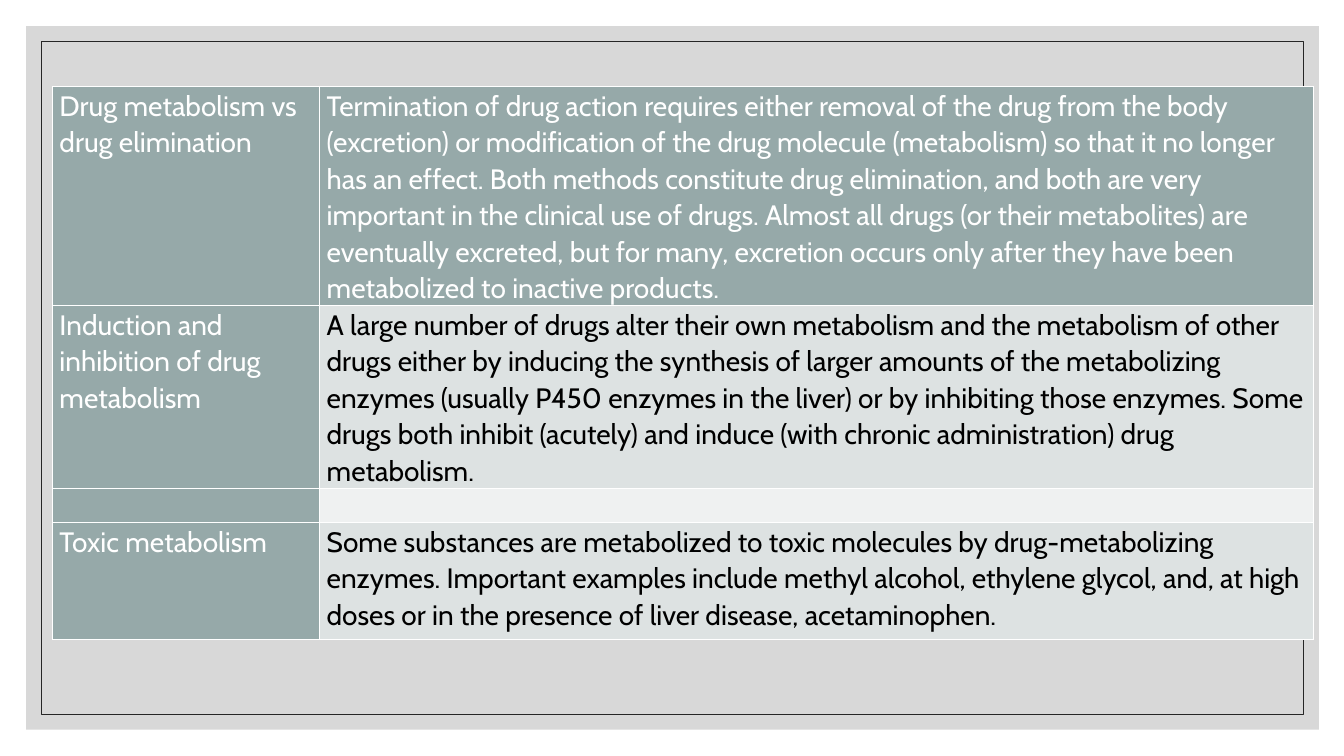
import pptx
import pptx.dml.color
import pptx.enum.shapes
import pptx.oxml
import pptx.oxml.ns
import pptx.util
from pptx.util import Inches

RGBColor = pptx.dml.color.RGBColor
WHITE = RGBColor(0xFF, 0xFF, 0xFF)
BLACK = RGBColor(0, 0, 0)
PANEL_GREY = RGBColor(0xBF, 0xBF, 0xBF)
FRAME_GREY = RGBColor(0x26, 0x26, 0x26)
SAGE = RGBColor(0x96, 0xA9, 0xA9)
BAND_DARK = RGBColor(0xDD, 0xE2, 0xE2)
BAND_LIGHT = RGBColor(0xEF, 0xF1, 0xF1)

# Topic, explanation, row height, explanation fill, explanation text colour
TOPICS = [
    ("Drug metabolism vs drug elimination",
     "Termination of drug action requires either removal of the drug from the body "
     "(excretion) or modification of the drug molecule (metabolism) so that it no longer "
     "has an effect. Both methods constitute drug elimination, and both are very important "
     "in the clinical use of drugs. Almost all drugs (or their metabolites) are eventually "
     "excreted, but for many, excretion occurs only after they have been metabolized to "
     "inactive products.",
     2.17, SAGE, WHITE),
    ("Induction and inhibition of drug metabolism",
     "A large number of drugs alter their own metabolism and the metabolism of other drugs "
     "either by inducing the synthesis of larger amounts of the metabolizing enzymes "
     "(usually P450 enzymes in the liver) or by inhibiting those enzymes. Some drugs both "
     "inhibit (acutely) and induce (with chronic administration) drug metabolism.",
     1.81, BAND_DARK, BLACK),
    ("", "", 0.34, BAND_LIGHT, BLACK),
    ("Toxic metabolism",
     "Some substances are metabolized to toxic molecules by drug-metabolizing enzymes. "
     "Important examples include methyl alcohol, ethylene glycol, and, at high doses or in "
     "the presence of liver disease, acetaminophen.",
     1.16, BAND_DARK, BLACK),
]
COLUMN_WIDTHS = (2.65, 9.86)


class MetabolismSlide:
    font = "Cabin"
    size = pptx.util.Pt(20)

    def __init__(self, deck):
        self.slide = deck.slides.add_slide(deck.slide_layouts[6])

    def rectangle(self, left, top, width, height, fill=None, alpha=100, line=None):
        box = self.slide.shapes.add_shape(
            pptx.enum.shapes.MSO_SHAPE.RECTANGLE,
            Inches(left), Inches(top), Inches(width), Inches(height))
        box.shadow.inherit = False
        if fill is None:
            box.fill.background()
        else:
            box.fill.solid()
            box.fill.fore_color.rgb = fill
            colour = box.fill._xPr.find(".//" + pptx.oxml.ns.qn("a:srgbClr"))
            colour.append(pptx.oxml.parse_xml(
                f'<a:alpha {pptx.oxml.ns.nsdecls("a")} val="{alpha * 1000}"/>'))
        if line is None:
            box.line.fill.background()
        else:
            box.line.color.rgb = line
            box.line.width = pptx.util.Pt(0.5)

    def cell(self, cell, text, fill, color):
        cell.fill.solid()
        cell.fill.fore_color.rgb = fill
        cell.margin_left = cell.margin_right = Inches(0.07)
        cell.margin_top = cell.margin_bottom = 0
        self.borders(cell)
        if text:
            paragraph = cell.text_frame.paragraphs[0]
            paragraph.line_spacing = 1.07
            paragraph.space_after = pptx.util.Pt(8)
            run = paragraph.add_run()
            run.text = text
            run.font.name = self.font
            run.font.size = self.size
            run.font.bold = False
            run.font.color.rgb = color

    def borders(self, cell):
        properties = cell._tc.get_or_add_tcPr()
        for position, side in enumerate(("lnL", "lnR", "lnT", "lnB")):
            properties.insert(position, pptx.oxml.parse_xml(
                f'<a:{side} {pptx.oxml.ns.nsdecls("a")} w="{pptx.util.Pt(1)}">'
                f'<a:solidFill><a:srgbClr val="{WHITE}"/></a:solidFill></a:{side}>'))

    def table(self, left, top, widths, topics):
        height = sum(topic[2] for topic in topics)
        table = self.slide.shapes.add_table(
            len(topics), len(widths), Inches(left), Inches(top),
            Inches(sum(widths)), Inches(height)).table
        table.first_row = table.horz_banding = False
        for column, width in zip(table.columns, widths):
            column.width = Inches(width)
        for index, (topic, explanation, row_height, fill, color) in enumerate(topics):
            table.rows[index].height = Inches(row_height)
            self.cell(table.cell(index, 0), topic, SAGE, WHITE)
            self.cell(table.cell(index, 1), explanation, fill, color)


def main():
    deck = pptx.Presentation()
    deck.slide_width, deck.slide_height = Inches(13.33), Inches(7.5)
    page = MetabolismSlide(deck)

    # Grey panel with thin inner frame
    page.rectangle(0.26, 0.26, 12.82, 6.98, fill=PANEL_GREY, alpha=60)
    page.rectangle(0.41, 0.41, 12.52, 6.68, line=FRAME_GREY)

    # Topics and explanations
    page.table(0.52, 0.86, COLUMN_WIDTHS, TOPICS)

    deck.save("out.pptx")


if __name__ == "__main__":
    main()
